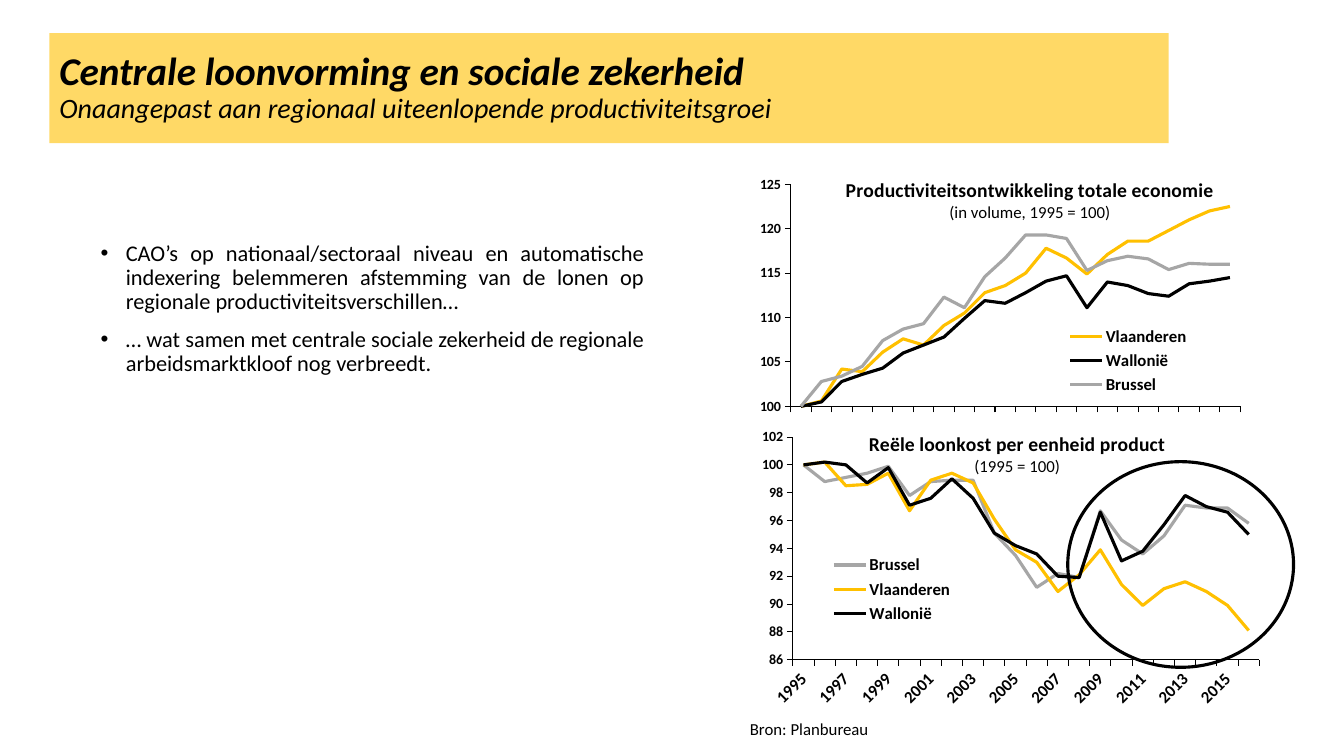
from lxml.etree import SubElement
from pptx import Presentation
from pptx.chart.data import CategoryChartData
from pptx.dml.color import RGBColor
from pptx.enum.chart import (XL_CHART_TYPE, XL_LEGEND_POSITION, XL_MARKER_STYLE,
                             XL_TICK_LABEL_POSITION, XL_TICK_MARK)
from pptx.enum.shapes import MSO_SHAPE
from pptx.enum.text import MSO_ANCHOR, PP_ALIGN
from pptx.oxml import parse_xml
from pptx.oxml.ns import nsdecls, qn
from pptx.util import Inches, Pt

WIDTH, HEIGHT = Inches(13.33), Inches(7.5)
COLOURS = {"text": "000000", "banner": "FFD966", "Vlaanderen": "FFC000",
           "Wallonië": "000000", "Brussel": "A6A6A6"}
HEADING = {"size": Pt(28), "bold": True, "italic": True}
SUBHEADING = {"size": Pt(20), "bold": False, "italic": True}
BODY = {"size": Pt(16)}
SOURCE = {"size": Pt(12)}
CHART_TITLE = {"size": Pt(14), "bold": True}
CHART_SUBTITLE = {"size": Pt(12), "bold": False}
CHART_LABEL = {"size": Pt(12), "bold": True}
AXIS_LABEL = {"size": Pt(10), "bold": True}

BULLETS = [
    "CAO’s op nationaal/sectoraal niveau en automatische indexering belemmeren "
    "afstemming van de lonen op regionale productiviteitsverschillen…",
    "… wat samen met centrale sociale zekerheid de regionale arbeidsmarktkloof "
    "nog verbreedt.",
]
PRODUCTIVITY = {
    "place": (52.5, 17.47, 42.5, 43.47),
    "titles": ("Productiviteitsontwikkeling totale economie", "(in volume, 1995 = 100)"),
    "layouts": {"plot": (14.9, 15.9, 78.7, 67.6), "title": (24, 12.5),
                "legend": (62.5, 58, 23, 23)},
    "scale": {"minimum_scale": 100, "maximum_scale": 125, "major_unit": 5},
    "format": "#,#00",
    "categories": range(1, 23),
    "labelled": False,
    "series": {
        "Vlaanderen": (100, 100.6, 104.2, 103.9, 106.1, 107.6, 106.9, 109.1, 110.5,
                       112.8, 113.6, 115, 117.8, 116.7, 114.9, 117.1, 118.6, 118.6,
                       119.8, 121, 122, 122.5),
        "Wallonië": (100, 100.5, 102.8, 103.6, 104.3, 106, 106.9, 107.8, 109.9,
                     111.9, 111.6, 112.8, 114.1, 114.7, 111.1, 114, 113.6, 112.7,
                     112.4, 113.8, 114.1, 114.5),
        "Brussel": (100, 102.8, 103.4, 104.5, 107.4, 108.7, 109.3, 112.3, 111.1,
                    114.6, 116.7, 119.3, 119.3, 118.9, 115.3, 116.4, 116.9, 116.6,
                    115.4, 116.1, 116, 116),
    },
}
LABOUR_COST = {
    "place": (56.03, 55.6, 39, 39.6),
    "titles": ("Reële loonkost per eenheid product", "(1995 = 100)"),
    "layouts": {"plot": (7.6, 5.6, 89, 74.4), "title": (21.5, 2.5),
                "legend": (14, 43.5, 25, 26)},
    "scale": {"minimum_scale": 86, "maximum_scale": 102, "major_unit": 2},
    "format": "General",
    "categories": range(1995, 2017),
    "labelled": True,
    "series": {
        "Brussel": (100, 98.8, 99.1, 99.4, 99.9, 97.8, 98.8, 98.9, 98.9, 95.1, 93.5,
                    91.2, 92.2, 91.9, 96.7, 94.6, 93.6, 94.9, 97.1, 96.9, 96.9, 95.8),
        "Vlaanderen": (100, 100.2, 98.5, 98.6, 99.4, 96.7, 98.9, 99.4, 98.7, 96.1,
                       93.9, 93, 90.9, 92.1, 93.9, 91.4, 89.9, 91.1, 91.6, 90.9,
                       89.9, 88.1),
        "Wallonië": (100, 100.2, 100, 98.7, 99.8, 97.1, 97.6, 99, 97.6, 95.1, 94.2,
                     93.6, 92, 91.9, 96.6, 93.1, 93.8, 95.7, 97.8, 97, 96.6, 95),
    },
}


def colour(name):
    """Look up a colour by name."""
    return RGBColor.from_string(COLOURS[name])


def area(left, top, width, height):
    """Turn percentages of the slide into lengths."""
    return [round(share * side / 100) for share, side in
            zip((left, top, width, height), (WIDTH, HEIGHT) * 2)]


def set_all(target, values):
    """Set each named attribute on the target."""
    for name, value in values.items():
        setattr(target, name, value)


def style_font(font, values):
    """Apply the common face and colour, then the given values."""
    set_all(font, {"name": "Calibri", **values})
    font.color.rgb = colour("text")


def add_lines(frame, lines, paragraph_format):
    """Write (text, font values) pairs as paragraphs and return them."""
    for index, (text, values) in enumerate(lines):
        para = frame.add_paragraph() if index else frame.paragraphs[0]
        set_all(para, paragraph_format)
        span = para.add_run()
        span.text = text
        style_font(span.font, values)
    return frame.paragraphs


def add_box(page, place, lines, paragraph_format):
    """Add a wrapping text box and return its paragraphs."""
    box = page.shapes.add_textbox(*area(*place))
    box.text_frame.word_wrap = True
    return add_lines(box.text_frame, lines, paragraph_format)


def add_bullets(page, place, texts):
    """Add justified bullets with space between them."""
    paras = add_box(page, place, [(text, BODY) for text in texts],
                    {"alignment": PP_ALIGN.JUSTIFY, "line_spacing": 0.9})
    for index, para in enumerate(paras):
        para.space_before = Pt(10 if index else 0)
        properties = para._p.get_or_add_pPr()
        properties.set("marL", str(Inches(0.25)))
        properties.set("indent", str(-Inches(0.25)))
        SubElement(properties, qn("a:buFont")).set("typeface", "Arial")
        SubElement(properties, qn("a:buChar")).set("char", "•")


def add_banner(page, place, lines):
    """Add the filled heading bar."""
    banner = page.shapes.add_shape(MSO_SHAPE.RECTANGLE, *area(*place))
    banner.shadow.inherit = False
    banner.fill.solid()
    banner.fill.fore_color.rgb = colour("banner")
    banner.line.fill.background()
    banner.text_frame.word_wrap = True
    banner.text_frame.vertical_anchor = MSO_ANCHOR.MIDDLE
    add_lines(banner.text_frame, lines,
              {"alignment": PP_ALIGN.LEFT, "line_spacing": 0.9})


def add_ring(page, place):
    """Add an unfilled ellipse around the last years."""
    ring = page.shapes.add_shape(MSO_SHAPE.OVAL, *area(*place))
    ring.shadow.inherit = False
    ring.fill.background()
    ring.line.color.rgb = colour("text")
    ring.line.width = Pt(2.25)


def set_layout(element, index, shares, inner=False):
    """Place a chart part by percentages of the chart."""
    for layout in element.findall(qn("c:layout")):
        element.remove(layout)
    target = '<c:layoutTarget val="inner"/>' if inner else ""
    modes = "".join(f'<c:{side}Mode val="edge"/>' for side in "xy")
    values = "".join(f'<c:{side} val="{share / 100:.3f}"/>'
                     for side, share in zip("xywh", shares))
    element.insert(index, parse_xml(
        f'<c:layout {nsdecls("c")}><c:manualLayout>{target}{modes}{values}'
        '</c:manualLayout></c:layout>'))


def style_axis(axis, font_values):
    """Give an axis black ticks and line, without gridlines."""
    set_all(axis, {"has_major_gridlines": False, "major_tick_mark": XL_TICK_MARK.OUTSIDE,
                   "minor_tick_mark": XL_TICK_MARK.NONE})
    axis.format.line.color.rgb = colour("text")
    axis.format.line.width = Pt(0.75)
    style_font(axis.tick_labels.font, font_values)


def style_categories(axis, labelled):
    """Slant every second year, or hide the labels."""
    style_axis(axis, CHART_LABEL)
    if not labelled:
        axis.tick_label_position = XL_TICK_LABEL_POSITION.NONE
        return
    element = axis._element
    element.find(qn("c:txPr")).find(qn("a:bodyPr")).set("rot", "-2700000")
    element.find(qn("c:noMultiLvlLbl")).addprevious(
        parse_xml(f'<c:tickLblSkip {nsdecls("c")} val="2"/>'))


def add_line_chart(page, content):
    """Add a line chart with placed title, plot and legend."""
    data = CategoryChartData()
    data.categories = [str(category) for category in content["categories"]]
    for name, values in content["series"].items():
        data.add_series(name, values)
    chart = page.shapes.add_chart(XL_CHART_TYPE.LINE, *area(*content["place"]), data).chart
    style_font(chart.font, {"size": Pt(10)})
    add_lines(chart.chart_title.text_frame,
              zip(content["titles"], (CHART_TITLE, CHART_SUBTITLE)),
              {"alignment": PP_ALIGN.CENTER})
    chart.has_legend = True
    set_all(chart.legend, {"position": XL_LEGEND_POSITION.RIGHT, "include_in_layout": False})
    style_font(chart.legend.font, CHART_LABEL)
    layouts = content["layouts"]
    set_layout(chart._chartSpace.chart.plotArea, 0, layouts["plot"], inner=True)
    set_layout(chart.chart_title._element, 1, layouts["title"])
    set_layout(chart.legend._element, 1, layouts["legend"])
    style_categories(chart.category_axis, content["labelled"])
    style_axis(chart.value_axis, AXIS_LABEL)
    set_all(chart.value_axis, content["scale"])
    set_all(chart.value_axis.tick_labels,
            {"number_format": content["format"], "number_format_is_linked": False})
    chart.plots[0].vary_by_categories = False
    for series in chart.plots[0].series:
        series.smooth = False
        series.marker.style = XL_MARKER_STYLE.NONE
        series.format.line.color.rgb = colour(series.name)
        series.format.line.width = Pt(2.25)


def main():
    """Build and save the slide."""
    deck = Presentation()
    set_all(deck, {"slide_width": WIDTH, "slide_height": HEIGHT})
    page = deck.slides.add_slide(deck.slide_layouts[6])
    add_line_chart(page, PRODUCTIVITY)
    add_line_chart(page, LABOUR_COST)
    add_ring(page, (79.45, 61.07, 16.8, 27.2))
    add_banner(page, (3.68, 4.4, 83.27, 14.53), [
        ("Centrale loonvorming en sociale zekerheid", HEADING),
        ("Onaangepast aan regionaal uiteenlopende productiviteitsgroei", SUBHEADING)])
    add_box(page, (55.06, 94.4, 12.08, 4), [("Bron: Planbureau", SOURCE)], {})
    add_bullets(page, (6.75, 31.33, 41.93, 63.47), BULLETS)
    deck.save("out.pptx")


if __name__ == "__main__":
    main()
